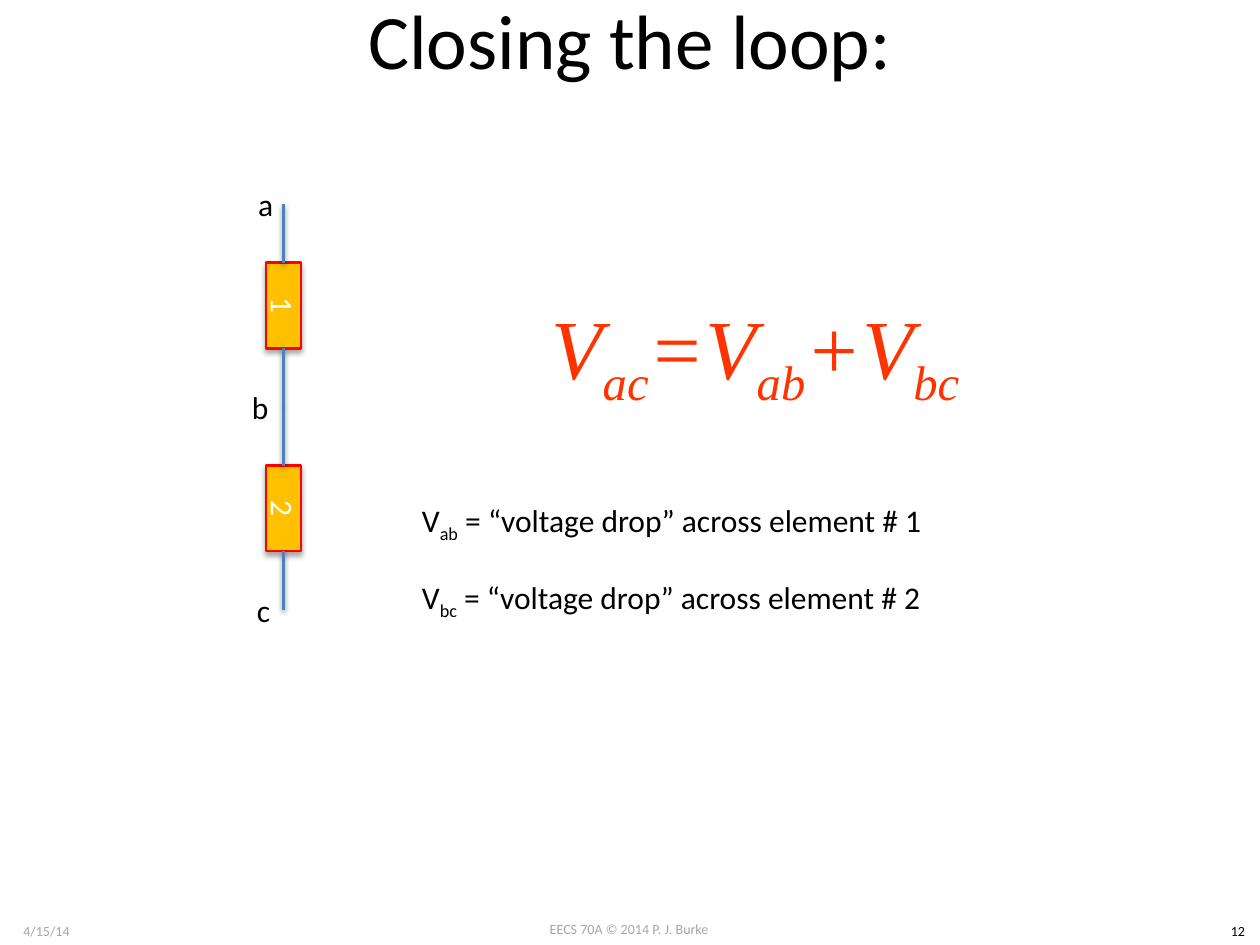
import dataclasses

import pptx
import pptx.dml.color
import pptx.enum.shapes
import pptx.enum.text
import pptx.oxml.ns
import pptx.util
from lxml import etree

ALIGN = pptx.enum.text.PP_ALIGN
ANCHOR = pptx.enum.text.MSO_ANCHOR
COLUMNS, ROWS = 100, 75
SUBSCRIPT = "-25000"


@dataclasses.dataclass(frozen=True)
class Theme:
    font: str = "Calibri"
    math_font: str = "Times New Roman"
    ink: str = "000000"
    muted: str = "A6A6A6"
    element_fill: str = "FFC000"
    element_line: str = "FF0000"
    element_text: str = "FFFFFF"
    wire: str = "4F81BD"
    equation: str = "FF3300"
    title_size: float = 44
    equation_size: float = 48
    body_size: float = 18
    footer_size: float = 8
    element_width: float = 1.5
    wire_width: float = 2


THEME = Theme()


def col(count):
    return pptx.util.Inches(10 * count / COLUMNS)


def row(count):
    return pptx.util.Inches(7.5 * count / ROWS)


def rgb(value):
    return pptx.dml.color.RGBColor.from_string(value)


def add_run(paragraph, text, size, color, font=THEME.font, italic=None, subscript=False):
    run = paragraph.add_run()
    run.text = text
    run.font.name = font
    run.font.size = pptx.util.Pt(size)
    run.font.color.rgb = rgb(color)
    run.font.italic = italic
    if subscript:
        run.font._element.set("baseline", SUBSCRIPT)


def add_text(slide, box, pieces, size, color=THEME.ink, align=ALIGN.LEFT,
             anchor=ANCHOR.TOP, wrap=False, **style):
    left, top, width, height = box
    label = slide.shapes.add_textbox(col(left), row(top), col(width), row(height))
    frame = label.text_frame
    frame.word_wrap = wrap
    frame.vertical_anchor = anchor
    paragraph = frame.paragraphs[0]
    paragraph.alignment = align
    for index, piece in enumerate(pieces):
        add_run(paragraph, piece, size, color, subscript=index % 2 == 1, **style)


def add_shadow(shape, distance, opacity):
    properties = shape._element.spPr
    qn = pptx.oxml.ns.qn
    for old in properties.findall(qn("a:effectLst")):
        properties.remove(old)
    effects = etree.SubElement(properties, qn("a:effectLst"))
    shadow = etree.SubElement(
        effects, qn("a:outerShdw"), blurRad=str(pptx.util.Pt(3.1)),
        dist=str(pptx.util.Pt(distance)), dir="5400000", rotWithShape="0")
    shade = etree.SubElement(shadow, qn("a:srgbClr"), val=THEME.ink)
    etree.SubElement(shade, qn("a:alpha"), val=str(opacity * 1000))


def add_element(slide, number, x, y, length, thickness):
    element = slide.shapes.add_shape(
        pptx.enum.shapes.MSO_SHAPE.RECTANGLE,
        col(x - length / 2), row(y - thickness / 2), col(length), row(thickness))
    element.rotation = 90
    element.fill.solid()
    element.fill.fore_color.rgb = rgb(THEME.element_fill)
    element.line.color.rgb = rgb(THEME.element_line)
    element.line.width = pptx.util.Pt(THEME.element_width)
    add_shadow(element, 1.8, 35)
    element.text_frame.vertical_anchor = ANCHOR.MIDDLE
    paragraph = element.text_frame.paragraphs[0]
    paragraph.alignment = ALIGN.CENTER
    add_run(paragraph, number, THEME.body_size, THEME.element_text)
    return element


def add_wire(slide, x, node_y, edge_y, element, side):
    wire = slide.shapes.add_connector(
        pptx.enum.shapes.MSO_CONNECTOR.STRAIGHT,
        col(x), row(node_y), col(x), row(edge_y))
    wire.end_connect(element, side)
    wire.end_x, wire.end_y = col(x), row(edge_y)
    wire.line.color.rgb = rgb(THEME.wire)
    wire.line.width = pptx.util.Pt(THEME.wire_width)
    add_shadow(wire, 1.6, 38)


def add_title(slide, text):
    title = slide.shapes.title
    title.left, title.top, title.width, title.height = col(5), row(-3.2), col(90), row(12.5)
    title.text_frame.vertical_anchor = ANCHOR.MIDDLE
    paragraph = title.text_frame.paragraphs[0]
    paragraph.alignment = ALIGN.CENTER
    add_run(paragraph, text, THEME.title_size, THEME.ink)


def add_footer(slide):
    for text, left, top, width, color in (
        ("EECS 70A © 2014 P. J. Burke", 38.3, 72.6, 23.3, THEME.muted),
        ("4/15/14", 0, 72.7, 7.4, THEME.muted),
        ("12", 96.5, 72.7, 3.5, THEME.ink),
    ):
        add_text(slide, (left, top, width, 2.4), [text], THEME.footer_size,
                 color, ALIGN.CENTER, wrap=True)


def add_circuit(slide):
    x, first_node, pitch = 22.5, 16.2, 16.1
    length, thickness = 6.8, 2.8
    nodes = [first_node + pitch * index for index in range(3)]
    for number, (upper, lower) in enumerate(zip(nodes, nodes[1:]), 1):
        middle = (upper + lower) / 2
        element = add_element(slide, str(number), x, middle, length, thickness)
        add_wire(slide, x, lower, middle + length / 2, element, 3)
        add_wire(slide, x, upper, middle - length / 2, element, 1)
    for name, left, width, node in zip("abc", (19.5, 19, 19.4), (3.2, 3.4, 3.1), nodes):
        add_text(slide, (left, node - 2, width, 4), [name], THEME.body_size)


def add_equations(slide):
    add_text(slide, (42.5, 19.9, 34.9, 16.2), ["V", "ac", "=V", "ab", "+V", "bc"],
             THEME.equation_size, THEME.equation, ALIGN.CENTER, ANCHOR.MIDDLE,
             font=THEME.math_font, italic=True)
    for index, nodes in enumerate(("ab", "bc")):
        meaning = f" = “voltage drop” across element # {index + 1}"
        add_text(slide, (32.5, 39.3 + 6.1 * index, 42.2, 4),
                 ["V", nodes, meaning], THEME.body_size)


def main():
    deck = pptx.Presentation()
    deck.slide_width, deck.slide_height = col(COLUMNS), row(ROWS)
    slide = deck.slides.add_slide(deck.slide_layouts[5])
    add_footer(slide)
    add_title(slide, "Closing the loop:")
    add_circuit(slide)
    add_equations(slide)
    deck.save("out.pptx")


if __name__ == "__main__":
    main()
